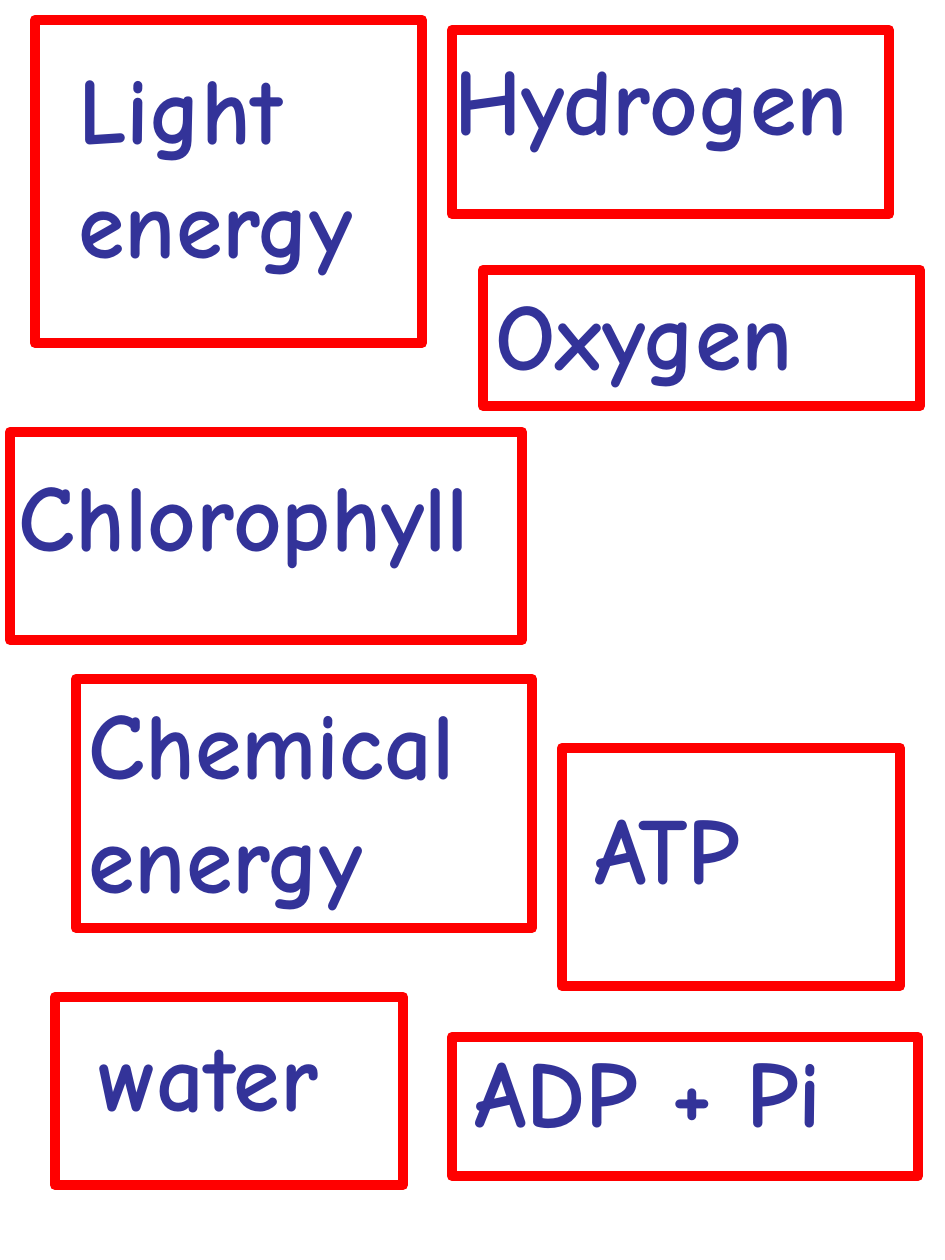
from pptx import Presentation
from pptx.dml.color import RGBColor
from pptx.enum.shapes import MSO_SHAPE
from pptx.enum.text import MSO_ANCHOR, PP_ALIGN
from pptx.util import Emu, Pt

PX = 914400 / 126
RED = RGBColor(0xFF, 0x00, 0x00)
INDIGO = RGBColor(0x33, 0x33, 0x99)
FONT = "Comic Neue"

CARDS = [
    ("Light energy", (35, 20, 387, 323), (31, 24, 367, 353)),
    ("Chlorophyll", (10, 432, 512, 208), (-4, 19, 525, 126)),
    ("Chemical energy", (76, 679, 456, 249), None),
    ("water", (55, 997, 348, 188), (31, 14, 367, 126)),
    ("Hydrogen", (452, 30, 437, 184), (-10, 5, 456, 126)),
    ("Oxygen", (483, 270, 437, 136), None),
    ("ADP + Pi", (452, 1037, 466, 139), (10, -10, 517, 126)),
    ("ATP", (562, 748, 338, 238), (20, 36, 387, 126)),
]


def px(*lengths):
    """Turn pixel lengths into EMU."""
    return [Emu(round(length * PX)) for length in lengths]


def write_term(holder, term):
    """Write the term at the top left of its holder."""
    frame = holder.text_frame
    frame.word_wrap = True
    frame.vertical_anchor = MSO_ANCHOR.TOP
    paragraph = frame.paragraphs[0]
    paragraph.alignment = PP_ALIGN.LEFT
    run = paragraph.add_run()
    run.text = term
    run.font.name = FONT
    run.font.size = Pt(54)
    run.font.bold = True
    run.font.color.rgb = INDIGO


def add_card(slide, term, box, label_box):
    """Add a red card whose label sits relative to it, or inside it if label_box is None."""
    left, top, width, height = box
    label = None
    if label_box:
        dx, dy, label_width, label_height = label_box
        label = slide.shapes.add_textbox(*px(left + dx, top + dy, label_width, label_height))
    border = slide.shapes.add_shape(MSO_SHAPE.RECTANGLE, *px(left, top, width, height))
    border.shadow.inherit = False
    border.fill.background()
    border.line.color.rgb = RED
    border.line.width = Pt(6)
    write_term(label or border, term)


def main():
    """Build the slide of photosynthesis term cards."""
    deck = Presentation()
    deck.slide_width, deck.slide_height = px(945, 1260)
    slide = deck.slides.add_slide(deck.slide_layouts[6])
    for term, box, label_box in CARDS:
        add_card(slide, term, box, label_box)
    deck.save("out.pptx")


if __name__ == "__main__":
    main()
